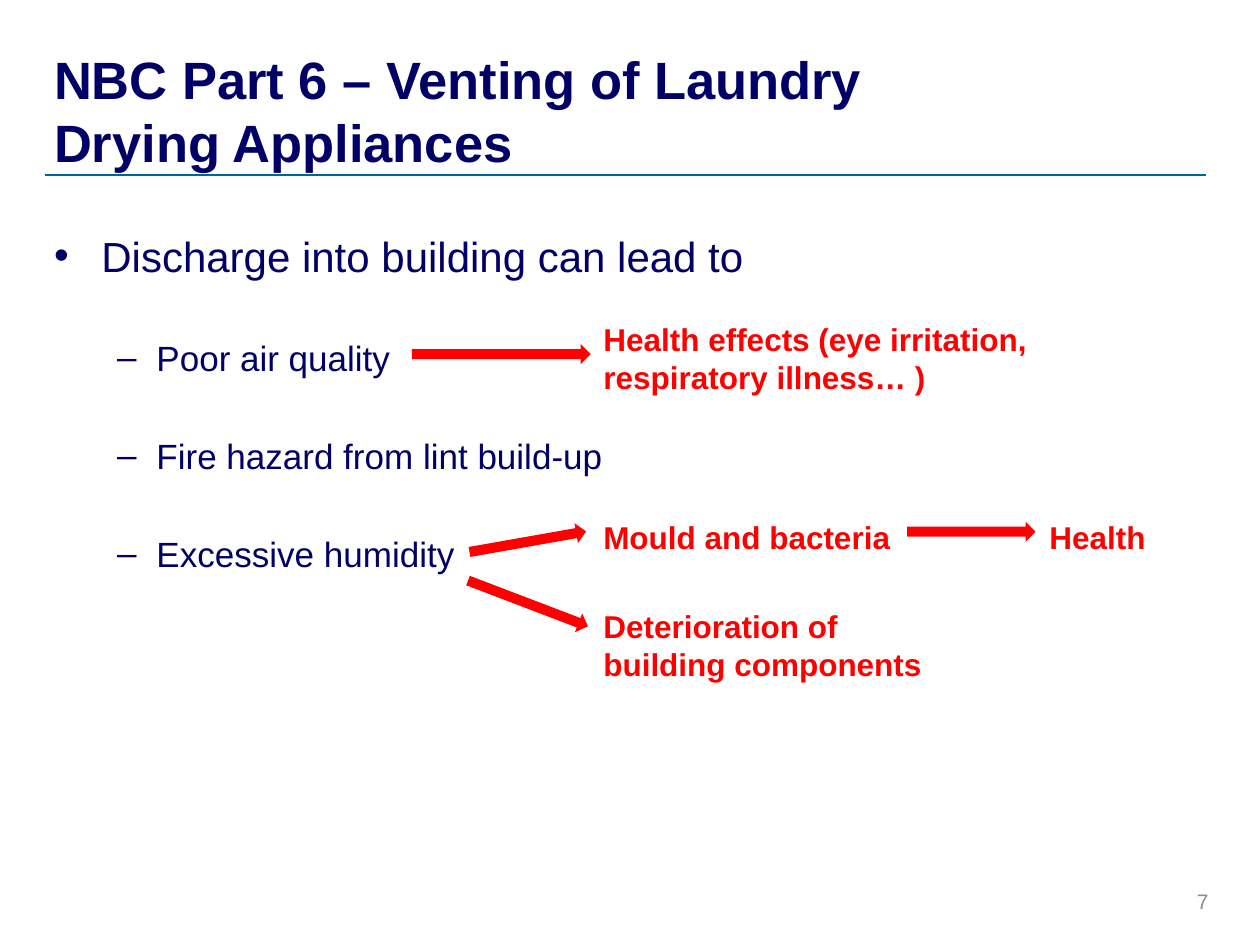
from typing import NamedTuple

from lxml.etree import SubElement
from pptx import Presentation
from pptx.dml.color import RGBColor
from pptx.enum.shapes import MSO_CONNECTOR as Connector, MSO_SHAPE as Preset
from pptx.enum.text import MSO_ANCHOR as Anchor, PP_ALIGN as Align
from pptx.oxml.ns import qn
from pptx.util import Pt

COLOURS = {"navy": "000066", "rule": "006699", "red": "FF0000", "grey": "8C8C8C"}


class Label(NamedTuple):
    text: str
    left: float
    top: float
    width: float
    height: float
    size: float = 18
    colour: str = "red"
    bold: bool = True
    anchor: Anchor = Anchor.TOP
    align: Align = Align.LEFT


class Bullet(NamedTuple):
    text: str
    mark: str
    size: float
    margin: float
    hanging: float
    level: int
    before: float


class Arrow(NamedTuple):
    left: float
    top: float
    width: float
    turn: float = 0


def point(text: str) -> Bullet:
    return Bullet(text, "–", 20, 58.5, 22.5, 1, 32)


LABELS = [
    Label("NBC Part 6 – Venting of Laundry Drying Appliances",
          23.8, 20.2, 557.3, 82, 30, "navy", anchor=Anchor.BOTTOM),
    Label("Health effects (eye irritation, respiratory illness… )", 337.7, 179.3, 272.2, 51),
    Label("Mould and bacteria", 337.7, 292.3, 187.2, 29),
    Label("Health", 592.6, 292.3, 85, 29),
    Label("Deterioration of building components", 337.7, 343.4, 215.3, 51),
    Label("7", 529.9, 500.4, 167.8, 28.8, 12, "grey", False, Anchor.MIDDLE, Align.RIGHT),
]
BULLETS = [
    Bullet("Discharge into building can lead to", "•", 24, 27, 27, 0, 0),
    point("Poor air quality"),
    point("Fire hazard from lint build-up"),
    point("Excessive humidity"),
]
ARROWS = [
    Arrow(235.4, 196.6, 102.2),
    Arrow(267.8, 303.8, 67.7, 350),
    Arrow(518.4, 298.1, 73.4),
    Arrow(265, 339.1, 73.4, 20.9),
]
ARROW_HEIGHT = 11.5


def rgb(name: str) -> RGBColor:
    return RGBColor.from_string(COLOURS[name])


def add_frame(page, left: float, top: float, width: float, height: float):
    box = page.shapes.add_textbox(Pt(left), Pt(top), Pt(width), Pt(height))
    box.text_frame.word_wrap = True
    return box.text_frame


def add_span(para, text: str, size: float, colour: str, bold: bool) -> None:
    span = para.add_run()
    span.text = text
    for key, value in {"name": "Arial", "size": Pt(size), "bold": bold}.items():
        setattr(span.font, key, value)
    span.font.color.rgb = rgb(colour)


def add_label(page, label: Label) -> None:
    frame = add_frame(page, label.left, label.top, label.width, label.height)
    frame.vertical_anchor = label.anchor
    para = frame.paragraphs[0]
    para.alignment = label.align
    add_span(para, label.text, label.size, label.colour, label.bold)


def add_bullets(page, bullets: list[Bullet]) -> None:
    frame = add_frame(page, 23.8, 128, 666, 334)
    for index, bullet in enumerate(bullets):
        para = frame.add_paragraph() if index else frame.paragraphs[0]
        para.level = bullet.level
        para.space_before = Pt(bullet.before)
        properties = para._p.get_or_add_pPr()
        properties.set("marL", str(Pt(bullet.margin)))
        properties.set("indent", str(-Pt(bullet.hanging)))
        SubElement(properties, qn("a:buFont")).set("typeface", "Arial")
        SubElement(properties, qn("a:buChar")).set("char", bullet.mark)
        add_span(para, bullet.text, bullet.size, "navy", False)


def add_arrow(page, arrow: Arrow) -> None:
    shape = page.shapes.add_shape(Preset.RIGHT_ARROW, Pt(arrow.left), Pt(arrow.top),
                                  Pt(arrow.width), Pt(ARROW_HEIGHT))
    shape.rotation = arrow.turn
    shape.shadow.inherit = False
    shape.fill.solid()
    shape.fill.fore_color.rgb = rgb("red")
    shape.line.fill.background()


def add_rule(page) -> None:
    rule = page.shapes.add_connector(Connector.STRAIGHT, Pt(25.5), Pt(100), Pt(689), Pt(100))
    rule.line.color.rgb = rgb("rule")
    rule.line.width = Pt(1)
    SubElement(rule._element.spPr, qn("a:effectLst"))


def main() -> None:
    """Build the slide on venting of laundry drying appliances."""
    deck = Presentation()
    deck.slide_width, deck.slide_height = Pt(720), Pt(540)
    page = deck.slides.add_slide(deck.slide_layouts[6])
    add_rule(page)
    add_bullets(page, BULLETS)
    for label in LABELS:
        add_label(page, label)
    for arrow in ARROWS:
        add_arrow(page, arrow)
    deck.save("out.pptx")


if __name__ == "__main__":
    main()
